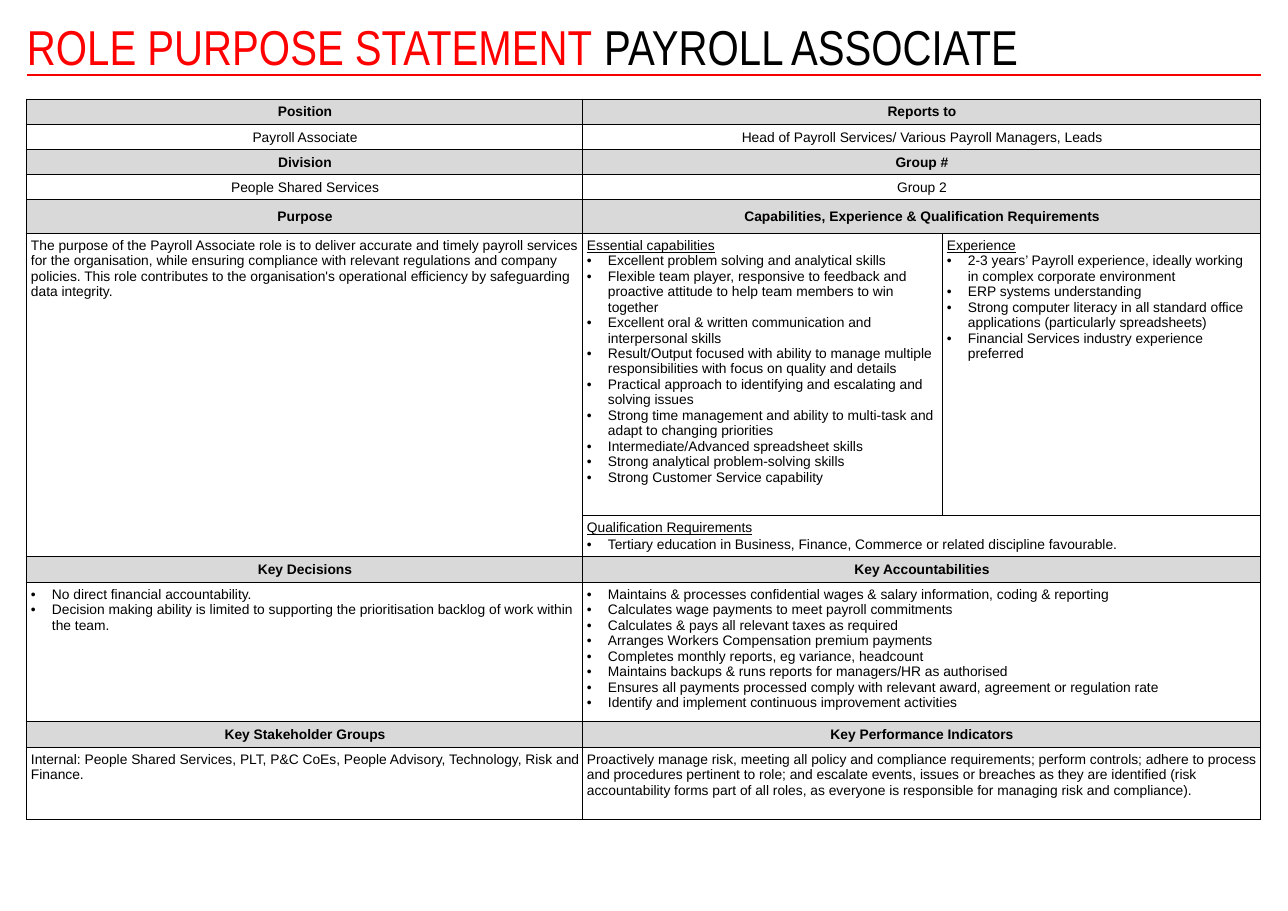
from lxml.etree import SubElement as Sub
from pptx import Presentation
from pptx.dml.color import RGBColor as RGB
from pptx.enum.shapes import MSO_CONNECTOR as LINK
from pptx.enum.text import MSO_ANCHOR as ANCHOR, MSO_AUTO_SIZE as FIT, PP_ALIGN as ALIGN
from pptx.oxml.ns import qn
from pptx.util import Pt

PX = 8298  # EMU in one px
RED, RULE = RGB(0xFF, 0, 0), RGB(0xF9, 0, 0)
BLACK, WHITE, GREY = RGB(0, 0, 0), RGB(255, 255, 255), RGB(0xD9, 0xD9, 0xD9)

COLS = [556, 360, 318]
PAD, DENT = 4, 21
LOOKS = {
    "head": dict(fill=GREY, bold=True, align=ALIGN.CENTER, anchor=ANCHOR.MIDDLE),
    "value": dict(fill=WHITE, bold=False, align=ALIGN.CENTER, anchor=ANCHOR.MIDDLE),
    "body": dict(fill=WHITE, bold=False, align=ALIGN.LEFT, anchor=ANCHOR.TOP),
}

# Cell contents: a plain text, or a lead line and its bullets
PURPOSE = (
    "The purpose of the Payroll Associate role is to deliver accurate and timely payroll "
    "services for the organisation, while ensuring compliance with relevant regulations and "
    "company policies. This role contributes to the organisation's operational efficiency by "
    "safeguarding data integrity.")
SKILLS = ("Essential capabilities", [
    "Excellent problem solving and analytical skills",
    "Flexible team player, responsive to feedback and proactive attitude to help team "
    "members to win together",
    "Excellent oral & written communication and interpersonal skills",
    "Result/Output focused with ability to manage multiple responsibilities with focus on "
    "quality and details",
    "Practical approach to identifying and escalating and solving issues",
    "Strong time management and ability to multi-task and adapt to changing priorities",
    "Intermediate/Advanced spreadsheet skills",
    "Strong analytical problem-solving skills",
    "Strong Customer Service capability",
])
PAST = ("Experience", [
    "2-3 years’ Payroll experience, ideally working in complex corporate environment",
    "ERP systems understanding",
    "Strong computer literacy in all standard office applications (particularly spreadsheets)",
    "Financial Services industry experience preferred",
])
DEGREE = ("Qualification Requirements", [
    "Tertiary education in Business, Finance, Commerce or related discipline favourable.",
])
CHOICES = ("", [
    "No direct financial accountability.",
    "Decision making ability is limited to supporting the prioritisation backlog of work "
    "within the team.",
])
DUTIES = ("", [
    "Maintains & processes confidential wages & salary information, coding & reporting",
    "Calculates wage payments to meet payroll commitments",
    "Calculates & pays all relevant taxes as required",
    "Arranges Workers Compensation premium payments",
    "Completes monthly reports, eg variance, headcount",
    "Maintains backups & runs reports for managers/HR as authorised",
    "Ensures all payments processed comply with relevant award, agreement or regulation rate",
    "Identify and implement continuous improvement activities",
])
GROUPS = ("Internal: People Shared Services, PLT, P&C CoEs, People Advisory, Technology, "
          "Risk and Finance.")
TARGETS = (
    "Proactively manage risk, meeting all policy and compliance requirements; perform "
    "controls; adhere to process and procedures pertinent to role; and escalate events, "
    "issues or breaches as they are identified (risk accountability forms part of all roles, "
    "as everyone is responsible for managing risk and compliance).")

# Height, look and cells of each row; None continues a merged cell
ROWS = [
    (26, "head", ["Position", "Reports to", None]),
    (25, "value", ["Payroll Associate",
                   "Head of Payroll Services/ Various Payroll Managers, Leads", None]),
    (25, "head", ["Division", "Group #", None]),
    (25, "value", ["People Shared Services", "Group 2", None]),
    (34, "head", ["Purpose", "Capabilities, Experience & Qualification Requirements", None]),
    (282, "body", [PURPOSE, SKILLS, PAST]),
    (41, "body", [None, DEGREE, None]),
    (26, "head", ["Key Decisions", "Key Accountabilities", None]),
    (139, "body", [CHOICES, DUTIES, None]),
    (26, "head", ["Key Stakeholder Groups", "Key Performance Indicators", None]),
    (72, "body", [GROUPS, TARGETS, None]),
]


def put(obj, form):
    for key, val in form.items():
        setattr(obj, key, val)


def add_run(para, text, color, **form):
    run = para.add_run()
    run.text = text
    put(run.font, form)
    run.font.color.rgb = color


def add_title(slide, x, y, w, h):
    title = slide.shapes.title
    put(title, dict(left=x * PX, top=y * PX, width=w * PX, height=h * PX))
    frame = title.text_frame
    put(frame, dict(margin_left=0, margin_top=0, margin_right=0, margin_bottom=0,
                    vertical_anchor=ANCHOR.BOTTOM, auto_size=FIT.NONE, word_wrap=True))
    para = frame.paragraphs[0]
    put(para, dict(alignment=ALIGN.LEFT, line_spacing=0.8))
    for text, color in [("ROLE PURPOSE STATEMENT", RED), (" PAYROLL ASSOCIATE", BLACK)]:
        add_run(para, text, color, size=Pt(32), name="Arial Narrow")


def add_rule(slide, x, y, w):
    rule = slide.shapes.add_connector(LINK.STRAIGHT, x * PX, y * PX, (x + w) * PX, y * PX)
    put(rule.line, dict(width=Pt(1.5)))
    rule.line.color.rgb = RULE
    Sub(rule._element.spPr, qn("a:effectLst"))


def add_edges(cell):
    props = cell._tc.get_or_add_tcPr()
    for side in ("lnL", "lnR", "lnT", "lnB"):
        edge = Sub(props, qn("a:" + side), w=str(Pt(0.75)))
        Sub(Sub(edge, qn("a:solidFill")), qn("a:srgbClr"), val=str(BLACK))


def fill_text(frame, item, look):
    lead, points = (item, []) if isinstance(item, str) else item
    lines = ([(lead, False)] if lead else []) + [(point, True) for point in points]
    for i, (text, dot) in enumerate(lines):
        para = frame.add_paragraph() if i else frame.paragraphs[0]
        para.alignment = look["align"]
        if item is DEGREE and dot:
            para.space_before = Pt(1.4)
        if dot:
            props = para._p.get_or_add_pPr()
            put_at = dict(marL=DENT * PX, indent=-DENT * PX)
            for key, val in put_at.items():
                props.set(key, str(val))
            Sub(props, qn("a:buFont"), typeface="Arial")
            Sub(props, qn("a:buChar"), char="•")
        add_run(para, text, BLACK, size=Pt(9), name="Arial", bold=look["bold"],
                underline=bool(points) and not dot)


def add_grid(slide, x, y):
    high = sum(row[0] for row in ROWS)
    grid = slide.shapes.add_table(len(ROWS), len(COLS), x * PX, y * PX,
                                  sum(COLS) * PX, high * PX).table
    put(grid, dict(first_row=False, horz_banding=False))
    for col, wide in zip(grid.columns, COLS):
        col.width = wide * PX
    for r, (tall, kind, items) in enumerate(ROWS):
        grid.rows[r].height = tall * PX
        look = LOOKS[kind]
        for c, item in enumerate(items):
            cell = grid.cell(r, c)
            add_edges(cell)
            cell.fill.solid()
            cell.fill.fore_color.rgb = look["fill"]
            put(cell, dict(margin_left=PAD * PX, margin_right=PAD * PX, margin_top=PAD * PX,
                           margin_bottom=PAD * PX, vertical_anchor=look["anchor"]))
            if item:
                fill_text(cell.text_frame, item, look)
        # The right half is one cell unless it holds two texts
        if items[2] is None:
            grid.cell(r, 1).merge(grid.cell(r, 2))
        if items[0] is None:
            grid.cell(r - 1, 0).merge(grid.cell(r, 0))


def main():
    deck = Presentation()
    put(deck, dict(slide_width=1288 * PX, slide_height=911 * PX))
    slide = deck.slides.add_slide(deck.slide_layouts[5])
    add_title(slide, 27, 22, 1218, 53)
    add_grid(slide, 27, 99)
    add_rule(slide, 27, 75, sum(COLS))
    deck.save("out.pptx")


if __name__ == "__main__":
    main()
